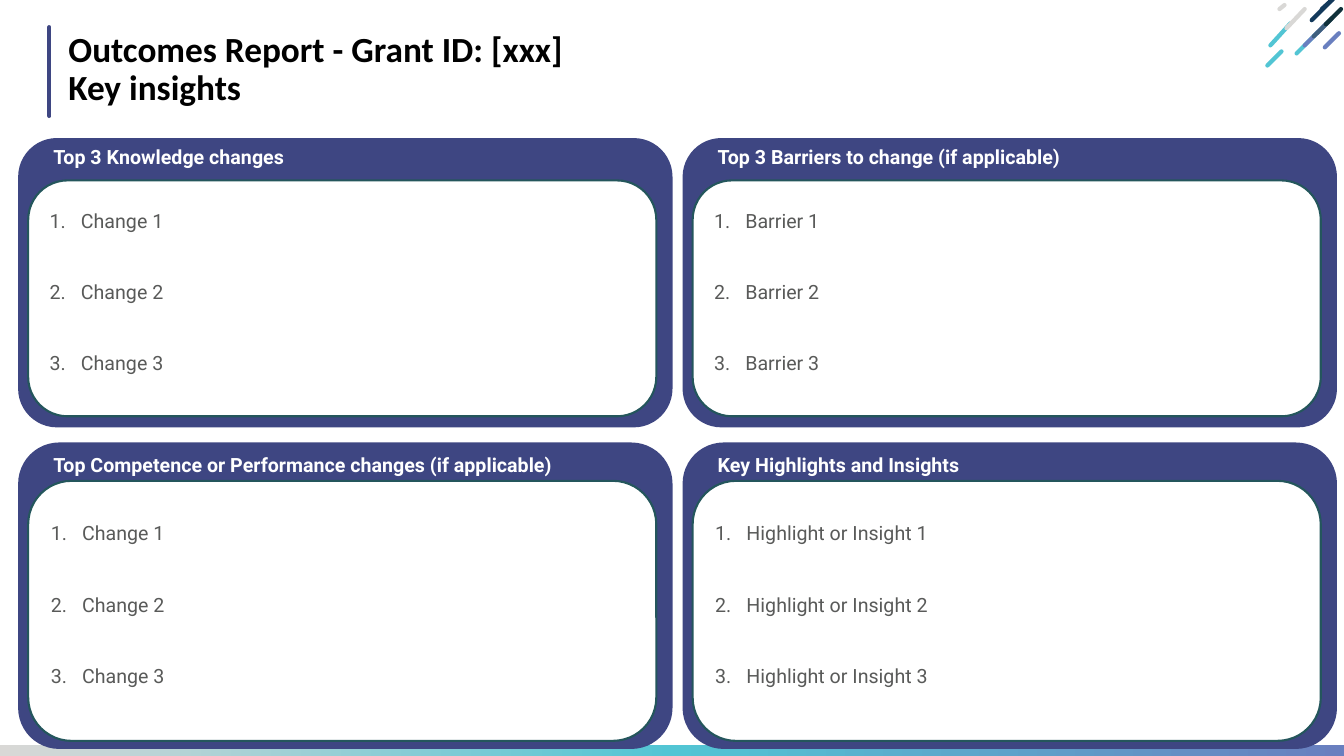
from pptx import Presentation
from pptx.dml.color import RGBColor
from pptx.enum.shapes import MSO_CONNECTOR, MSO_SHAPE
from pptx.enum.text import MSO_ANCHOR, PP_ALIGN
from pptx.oxml.ns import qn
from pptx.util import Inches, Pt
from lxml.etree import SubElement

NAVY, TEAL, BLUE, SILVER = "3E4682", "52C5D4", "697FBF", "D9D8D6"
INK, STEEL, PINE = "13395B", "3F5F7E", "10313A"
WHITE, BLACK, GREY, GREEN = "FFFFFF", "000000", "595A59", "24565C"

STROKES = [
    (13.01, 0.2, 13.22, -0.01, INK),
    (13.11, 0.09, 13.22, -0.01, INK),
    (12.57, 0.65, 12.71, 0.51, TEAL),
    (13.14, 0.47, 13.28, 0.33, BLUE),
    (12.86, 0.53, 13.07, 0.32, TEAL),
    (12.94, 0.45, 13.15, 0.24, BLUE),
    (13.03, 0.36, 13.21, 0.18, STEEL),
    (13.15, 0.24, 13.3, 0.09, PINE),
    (12.6, 0.45, 12.8, 0.23, TEAL),
    (12.76, 0.28, 12.94, 0.09, SILVER),
    (12.69, 0.09, 12.74, 0.05, SILVER),
]
COLUMNS = [0.18, 6.77]
PANEL_WIDTH = 6.49
ROWS = [
    (1.37, 2.87, 0.01, 0.42, 2.34, [
        ("Top 3 Knowledge changes", "Change"),
        ("Top 3 Barriers to change (if applicable)", "Barrier"),
    ]),
    (4.39, 3.04, 0.05, 0.38, 2.58, [
        ("Top Competence or Performance changes (if applicable)", "Change"),
        ("Key Highlights and Insights", "Highlight or Insight"),
    ]),
]


def color(code):
    """Turn a hex string into a colour."""
    return RGBColor.from_string(code)


def add_block(page, kind, box, fill, line=None):
    """Add a filled preset shape without shadow."""
    block = page.shapes.add_shape(kind, *map(Inches, box))
    block.shadow.inherit = False
    block.fill.solid()
    block.fill.fore_color.rgb = color(fill)
    if line:
        block.line.color.rgb = color(line)
        block.line.width = Pt(1.5)
    else:
        block.line.fill.background()
    return block


def add_stroke(page, ends, code):
    """Add a round-ended line between two points."""
    stroke = page.shapes.add_connector(MSO_CONNECTOR.STRAIGHT, *map(Inches, ends))
    stroke.line.color.rgb = color(code)
    stroke.line.width = Pt(3)
    stroke.line._get_or_add_ln().set("cap", "rnd")
    SubElement(stroke._element.spPr, qn("a:effectLst"))


def style_text(para, font, size, code, bold=False):
    """Format every run of a paragraph, aligned left."""
    para.alignment = PP_ALIGN.LEFT
    for span in para.runs:
        span.font.name = font
        span.font.size = Pt(size)
        span.font.bold = bold
        span.font.color.rgb = color(code)


def add_label(page, box, text, anchor, font, size, code):
    """Add a bold text box and return its paragraph."""
    frame = page.shapes.add_textbox(*map(Inches, box)).text_frame
    frame.word_wrap = True
    frame.vertical_anchor = anchor
    frame.text = text
    para = frame.paragraphs[0]
    style_text(para, font, size, code, bold=True)
    return para


def fill_list(frame, items):
    """Write the items as a widely spaced numbered list."""
    frame.word_wrap = True
    frame.vertical_anchor = MSO_ANCHOR.MIDDLE
    frame.margin_bottom = Inches(0.18)
    frame.text = "\n".join(items)
    for index, para in enumerate(frame.paragraphs):
        style_text(para, "Roboto", 14, GREY)
        para.space_before = Pt(34 if index else 0)
        properties = para._p.get_or_add_pPr()
        properties.set("marL", str(Inches(0.31)))
        properties.set("indent", str(Inches(-0.31)))
        SubElement(properties, qn("a:buFont"), typeface="Roboto")
        SubElement(properties, qn("a:buAutoNum"), type="arabicPeriod")


def add_panel(page, box, heading, item, heading_drop, body_drop, body_height):
    """Draw a navy panel with its heading and numbered white body."""
    left, top, width, height = box
    frame = add_block(page, MSO_SHAPE.ROUNDED_RECTANGLE, box, NAVY)
    frame.adjustments[0] = 0.134
    body_box = (left + 0.1, top + body_drop, width - 0.26, body_height)
    body = add_block(page, MSO_SHAPE.ROUNDED_RECTANGLE, body_box, WHITE, GREEN)
    fill_list(body.text_frame, [f"{item} {number}" for number in (1, 2, 3)])
    heading_box = (left + 0.25, top + heading_drop, 5.72, 0.34)
    add_label(page, heading_box, heading, MSO_ANCHOR.BOTTOM, "Roboto", 14, WHITE)


def add_footer(page, box):
    """Draw the gradient band."""
    band = add_block(page, MSO_SHAPE.RECTANGLE, box, SILVER)
    band.fill.gradient()
    band.fill.gradient_angle = 0
    stops = band.fill._fill._gradFill.find(qn("a:gsLst"))
    for stop in list(stops):
        stops.remove(stop)
    for position, code in ((0, SILVER), (50000, TEAL), (100000, BLUE)):
        stop = SubElement(stops, qn("a:gs"), pos=str(position))
        SubElement(stop, qn("a:srgbClr"), val=code)


def add_header(page, box):
    """Draw the accent bar, corner strokes and title."""
    left, top, width, height = box
    bar = left - 0.09
    add_stroke(page, (bar, top, bar, top + 0.88), NAVY)
    for *ends, code in STROKES:
        add_stroke(page, ends, code)
    title = "Outcomes Report - Grant ID: [xxx]\vKey insights"
    para = add_label(page, box, title, MSO_ANCHOR.MIDDLE, "Calibri", 25.2, BLACK)
    para.line_spacing = 0.9


def main():
    """Build the slide and save the deck."""
    deck = Presentation()
    deck.slide_width, deck.slide_height = Inches(13.33), Inches(7.5)
    page = deck.slides.add_slide(deck.slide_layouts[6])
    add_footer(page, (0, 7.39, 13.33, 0.12))
    add_header(page, (0.58, 0.27, 11.71, 0.86))
    for top, height, heading_drop, body_drop, body_height, panels in ROWS:
        for left, (heading, item) in zip(COLUMNS, panels):
            add_panel(page, (left, top, PANEL_WIDTH, height), heading, item,
                      heading_drop, body_drop, body_height)
    deck.save("out.pptx")


if __name__ == "__main__":
    main()
